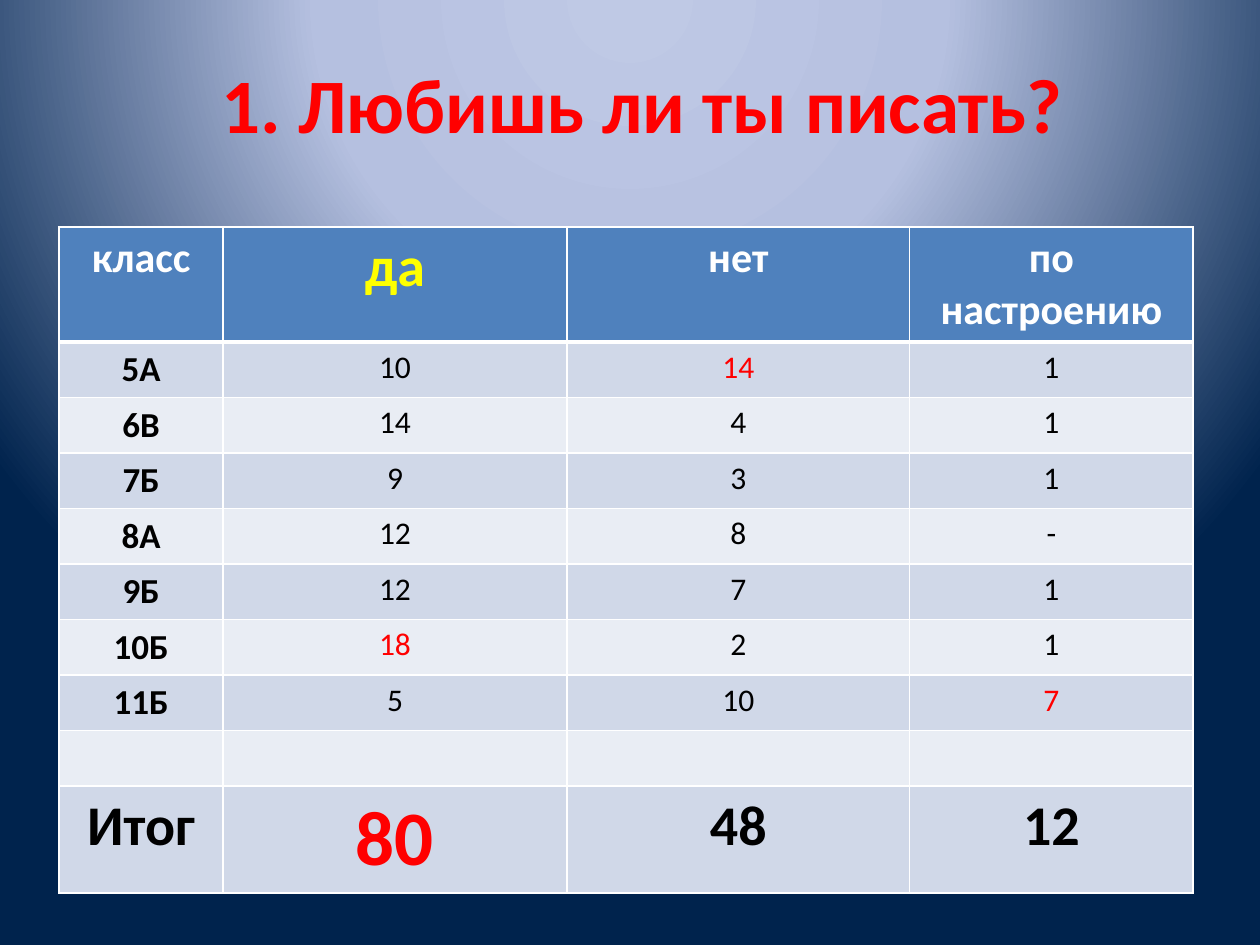
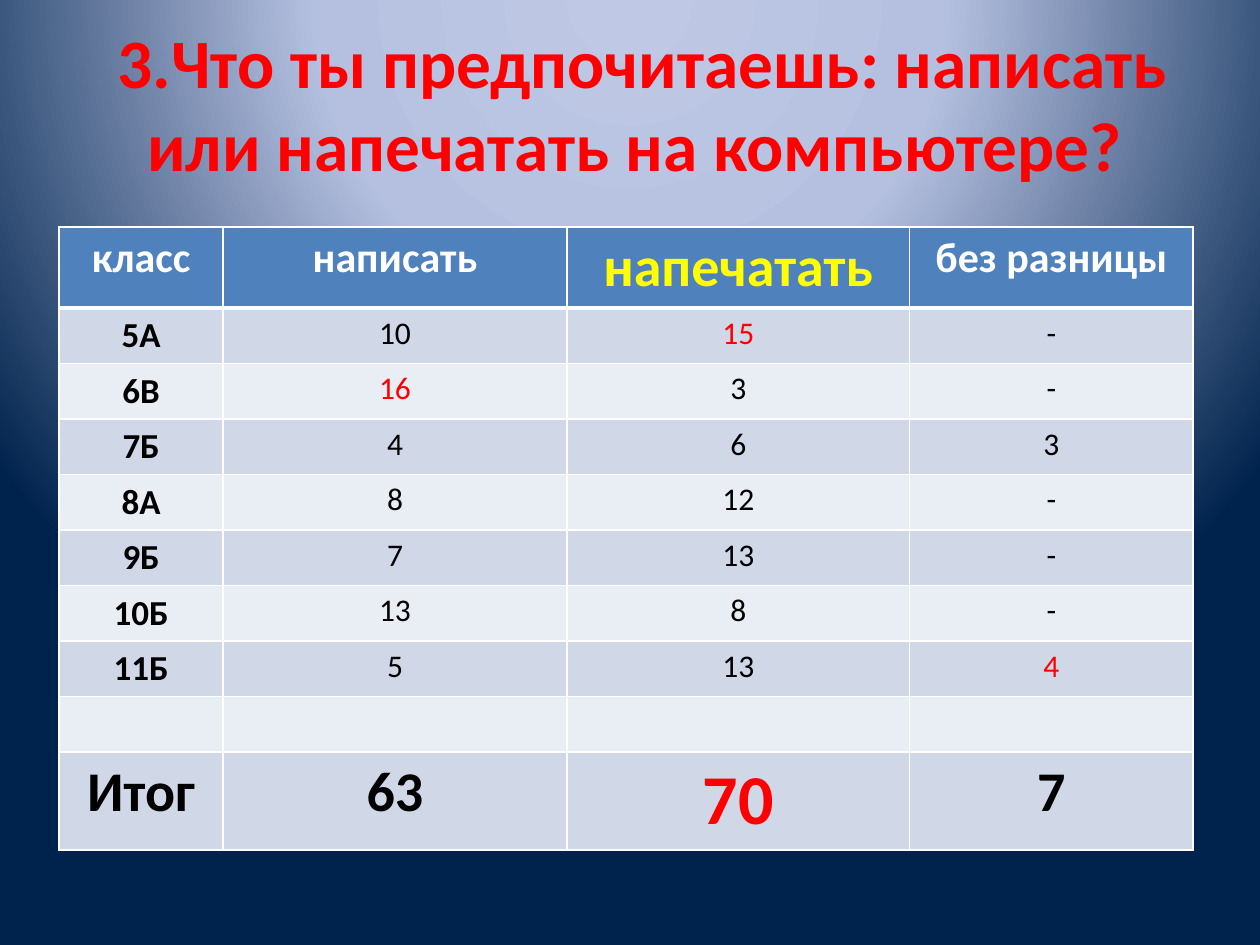
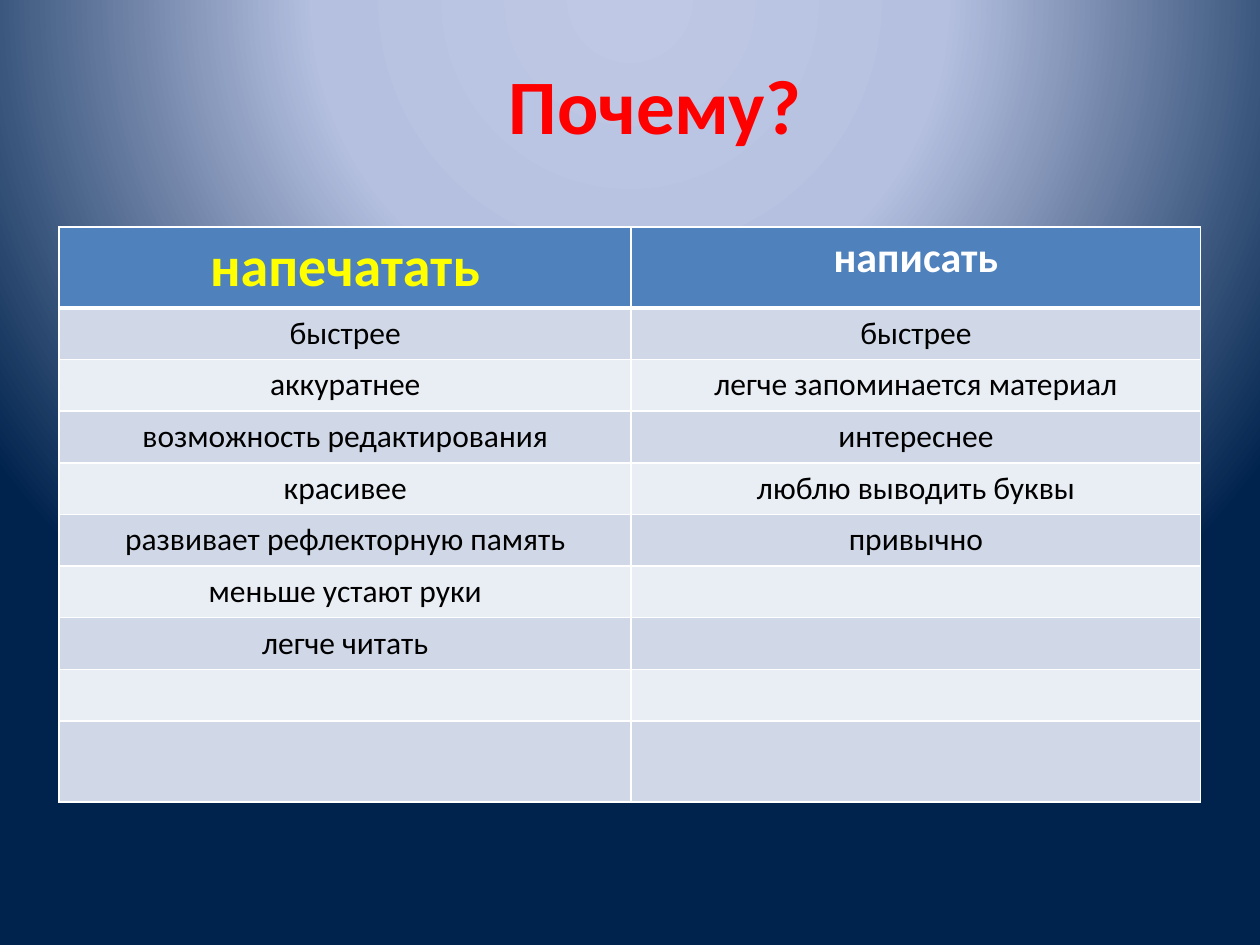
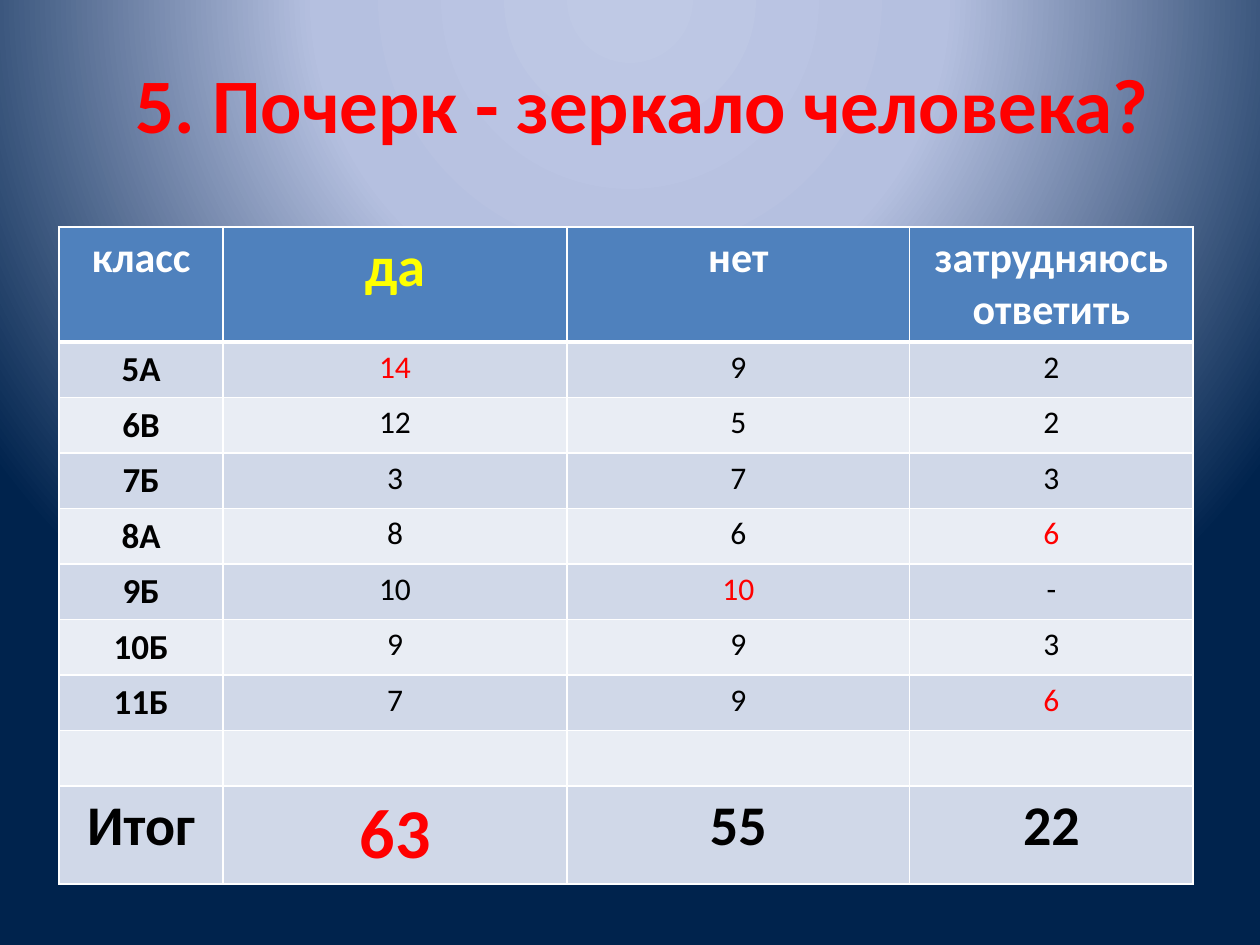
"""Build four survey slides about handwriting, each with a title and a results table."""
import dataclasses

import pptx
import pptx.dml.color
import pptx.enum.text
import pptx.oxml
import pptx.oxml.ns
import pptx.util


@dataclasses.dataclass(frozen=True)
class Theme:
    font: str = "Calibri"
    red: str = "FF0000"
    yellow: str = "FFFF00"
    white: str = "FFFFFF"
    black: str = "000000"
    outline: str = "D73A36"
    header: str = "4F81BD"
    bands: tuple = ("E9EDF4", "D0D8E8")
    glow: tuple = ((0, "BFC9E5"), (40, "B5C0E0"), (100, "00234D"))
    title_size: float = 44
    long_title_size: float = 39.6
    head_size: float = 24
    large_size: float = 32
    winner_size: float = 40
    top_winner_size: float = 44
    class_size: float = 20
    body_size: float = 18


theme = Theme()
NAMESPACE = pptx.oxml.ns.nsdecls("a")
CLASSES = ["5А", "6В", "7Б", "8А", "9Б", "10Б", "11Б"]
WIDE_TITLE = (0.05, 0.04, 0.92, 0.137)
NARROW_TITLE = (0.227, 0.052, 0.586, 0.115)
SURVEY_COLUMNS = (0.13, 0.273, 0.272, 0.225)
REASON_COLUMNS = (0.454, 0.452)


def style_paragraph(paragraph, size, color, bold):
    """Centre a paragraph and set its font."""
    paragraph.alignment = pptx.enum.text.PP_ALIGN.CENTER
    paragraph.font.name = theme.font
    paragraph.font.size = pptx.util.Pt(size)
    paragraph.font.bold = bold
    paragraph.font.color.rgb = pptx.dml.color.RGBColor.from_string(color)


def line_xml(tag, points, color):
    """Return the XML element of a solid line."""
    return pptx.oxml.parse_xml(
        f'<a:{tag} {NAMESPACE} w="{int(pptx.util.Pt(points))}"><a:solidFill>'
        f'<a:srgbClr val="{color}"/></a:solidFill></a:{tag}>')


presentation = pptx.Presentation()
presentation.slide_width = pptx.util.Inches(10)
presentation.slide_height = pptx.util.Inches(7.5)
width, height = presentation.slide_width, presentation.slide_height

master = presentation.slide_master
master.background.fill.solid()
background = master.element.find(".//" + pptx.oxml.ns.qn("p:bgPr"))
stops = "".join(f'<a:gs pos="{share * 1000}"><a:srgbClr val="{color}"/></a:gs>'
                for share, color in theme.glow)
background.replace(background[0], pptx.oxml.parse_xml(
    f'<a:gradFill {NAMESPACE} rotWithShape="1"><a:gsLst>{stops}</a:gsLst><a:path path="circle">'
    '<a:fillToRect l="50000" t="-80000" r="50000" b="180000"/></a:path></a:gradFill>'))

surveys = [
    ([("1. Любишь ли ты писать?", True)], theme.title_size,
     ["да", "нет", "по настроению"], theme.top_winner_size,
     [(10, 14, 9, 12, 12, 18, 5), (14, 4, 3, 8, 7, 2, 10), (1, 1, 1, 0, 1, 1, 7)]),
    ([("3.Что ты предпочитаешь: написать или напечатать на компьютере? ", False)],
     theme.long_title_size,
     ["написать", "напечатать", "без разницы"], theme.winner_size,
     [(10, 16, 4, 8, 7, 13, 5), (15, 3, 6, 12, 13, 8, 13), (0, 0, 3, 0, 0, 0, 4)]),
    ([("5.", True), (" Почерк - зеркало человека", False), ("?", True)], theme.title_size,
     ["да", "нет", "затрудняюсь ответить"], theme.winner_size,
     [(14, 12, 3, 8, 10, 9, 7), (9, 5, 7, 6, 10, 9, 9), (2, 2, 3, 6, 0, 3, 6)]),
]

pages = []
for title_runs, title_size, answers, winner_size, votes in surveys:
    totals = [sum(column) for column in votes]
    winner = totals.index(max(totals))
    rows = [[("класс", theme.head_size, theme.white, True)]]
    for index, answer in enumerate(answers):
        rows[0].append((answer, theme.large_size, theme.yellow, True) if index == winner
                       else (answer, theme.head_size, theme.white, True))
    for school_class, counts in zip(CLASSES, zip(*votes)):
        row = [(school_class, theme.class_size, theme.black, True)]
        for count, column in zip(counts, votes):
            color = theme.red if count == max(column) else theme.black
            row.append((str(count or "-"), theme.body_size, color, False))
        rows.append(row)
    rows.append([("", theme.class_size, theme.black, False)] * 4)
    rows.append([("Итог", theme.large_size, theme.black, True)])
    for index, total in enumerate(totals):
        rows[-1].append((str(total), winner_size, theme.red, True) if index == winner
                        else (str(total), theme.large_size, theme.black, True))
    pages.append((title_runs, title_size, WIDE_TITLE, SURVEY_COLUMNS, rows))

reasons = [
    ("быстрее", "быстрее"),
    ("аккуратнее", "легче запоминается материал"),
    ("возможность редактирования", "интереснее"),
    ("красивее", "люблю выводить буквы"),
    ("развивает рефлекторную память", "привычно"),
    ("меньше устают руки", ""),
    ("легче читать", ""),
    ("", ""),
]
reason_rows = [[("напечатать", theme.large_size, theme.yellow, True),
                ("написать", theme.head_size, theme.white, True)]]
reason_rows += [[(reason, theme.body_size, theme.black, False) for reason in pair]
                for pair in reasons]
reason_rows.append([("", theme.large_size, theme.black, False)] * 2)
pages.insert(2, ([("Почему?", True)], theme.title_size, NARROW_TITLE,
                 REASON_COLUMNS, reason_rows))

for title_runs, title_size, title_box, columns, rows in pages:
    slide = presentation.slides.add_slide(presentation.slide_layouts[5])

    title = slide.shapes.title
    left, top, across, down = title_box
    title.left, title.top = int(left * width), int(top * height)
    title.width, title.height = int(across * width), int(down * height)
    title.text_frame.auto_size = pptx.enum.text.MSO_AUTO_SIZE.NONE
    title.text_frame.vertical_anchor = pptx.enum.text.MSO_ANCHOR.MIDDLE
    paragraph = title.text_frame.paragraphs[0]
    style_paragraph(paragraph, title_size, theme.red, True)
    for text, outlined in title_runs:
        run = paragraph.add_run()
        run.text = text
        if outlined:
            run._r.get_or_add_rPr().insert(0, line_xml("ln", 1.42, theme.outline))

    row_height = pptx.util.Inches(0.41)
    table = slide.shapes.add_table(
        len(rows), len(columns), int(0.047 * width), int(0.24 * height),
        int(sum(columns) * width), row_height * len(rows)).table
    for column, share in zip(table.columns, columns):
        column.width = int(share * width)
    for row_index, row in enumerate(rows):
        table.rows[row_index].height = row_height
        for column_index, (text, size, color, bold) in enumerate(row):
            cell = table.cell(row_index, column_index)
            cell.text = text
            style_paragraph(cell.text_frame.paragraphs[0], size, color, bold)
            fill = theme.bands[row_index % 2] if row_index else theme.header
            cell.fill.solid()
            cell.fill.fore_color.rgb = pptx.dml.color.RGBColor.from_string(fill)
            borders = {"lnL": 1, "lnR": 1, "lnT": 3 if row_index == 1 else 1,
                       "lnB": 1 if row_index else 3}
            for position, (side, points) in enumerate(borders.items()):
                cell._tc.get_or_add_tcPr().insert(
                    position, line_xml(side, points, theme.white))

presentation.save("out.pptx")
